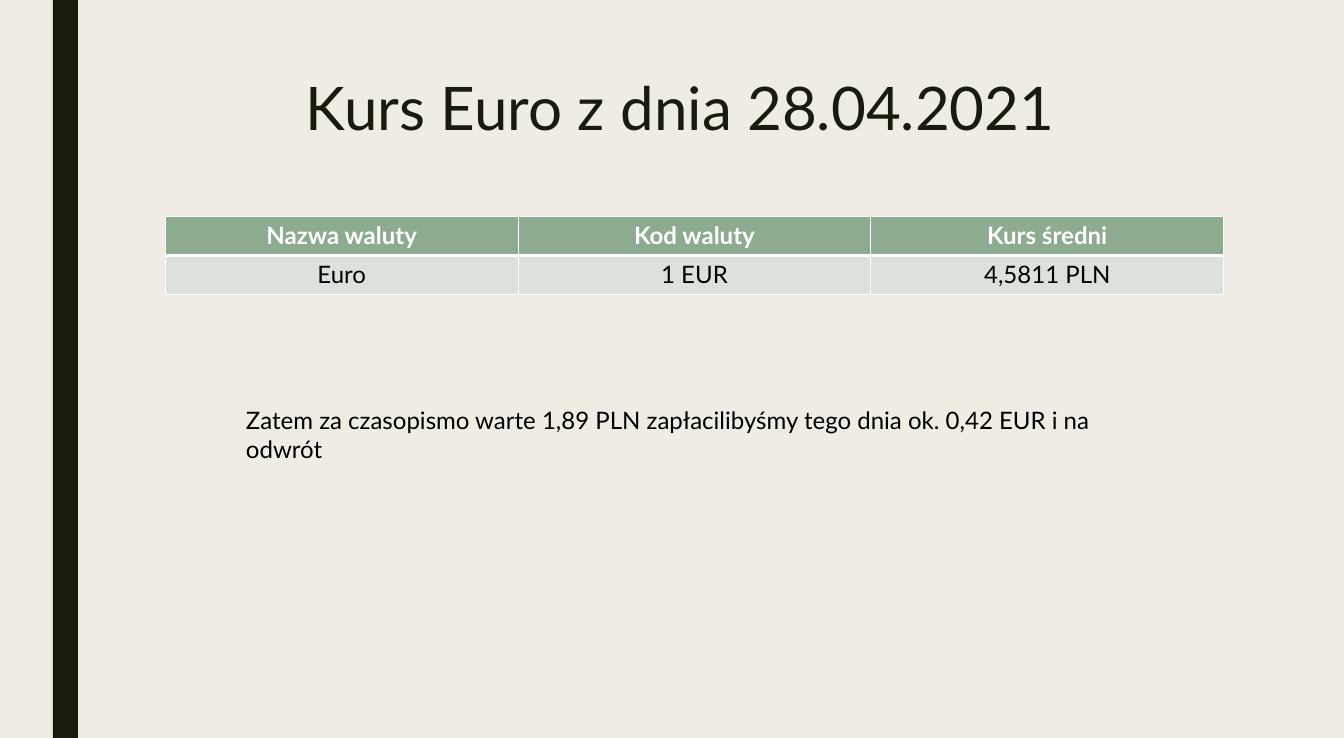
from lxml.etree import SubElement
from pptx import Presentation
from pptx.dml.color import RGBColor
from pptx.enum.shapes import MSO_SHAPE
from pptx.enum.text import MSO_ANCHOR, MSO_AUTO_SIZE, PP_ALIGN
from pptx.oxml.ns import qn
from pptx.util import Cm, Pt

TITLE = "Kurs Euro z dnia 28.04.2021"
RATES = [
    ("Nazwa waluty", "Kod waluty", "Kurs średni"),
    ("Euro", "1 EUR", "4,5811 PLN"),
]
NOTE = ("Zatem za czasopismo warte 1,89 PLN zapłacilibyśmy tego dnia "
        "ok. 0,42 EUR i na odwrót")

FONT = "Lato"
DARK, CREAM, WHITE, BLACK = "191B0E", "EFEDE3", "FFFFFF", "000000"
GREEN, PALE = "8DAB8E", "DBE2DB"
WIDE, HIGH = Cm(35.51), Cm(19.51)
SPAN = Cm(27.96)
ROW = Cm(1.03)


def color(code):
    return RGBColor.from_string(code)


def paint(fill, code):
    fill.solid()
    fill.fore_color.rgb = color(code)


def style(frame, size, code, align, bold=False):
    for para in frame.paragraphs:
        para.alignment = align
        for run in para.runs:
            font = run.font
            font.name, font.size, font.bold = FONT, Pt(size), bold
            font.color.rgb = color(code)


def border(cell, widths):
    """Draw white cell edges; call before the cell is filled."""
    props = cell._tc.get_or_add_tcPr()
    for side, width in widths.items():
        line = SubElement(props, qn("a:ln" + side), w=str(Pt(width)))
        fill = SubElement(line, qn("a:solidFill"))
        SubElement(fill, qn("a:srgbClr"), val=WHITE)


def add_rates(slide):
    rows, cols = len(RATES), len(RATES[0])
    table = slide.shapes.add_table(
        rows, cols, Cm(4.37), Cm(5.72), SPAN, ROW * rows).table
    for r, texts in enumerate(RATES):
        head = r == 0
        table.rows[r].height = ROW
        for c, text in enumerate(texts):
            cell = table.cell(r, c)
            cell.text_frame.text = text
            style(cell.text_frame, 18, WHITE if head else BLACK,
                  PP_ALIGN.CENTER, head)
            border(cell, {"L": 1, "R": 1, "T": 1 if head else 3,
                          "B": 3 if head else 1})
            paint(cell.fill, GREEN if head else PALE)


def main():
    deck = Presentation()
    deck.slide_width, deck.slide_height = WIDE, HIGH
    slide = deck.slides.add_slide(deck.slide_layouts[5])
    paint(slide.background.fill, CREAM)

    bar = slide.shapes.add_shape(
        MSO_SHAPE.RECTANGLE, Cm(1.4), 0, Cm(0.66), HIGH)
    bar.shadow.inherit = False
    paint(bar.fill, DARK)
    bar.line.fill.background()

    title = slide.shapes.title
    title.left, title.top = Cm(3.99), Cm(1.96)
    title.width, title.height = SPAN, Cm(2.69)
    frame = title.text_frame
    frame.text = TITLE
    frame.vertical_anchor = MSO_ANCHOR.TOP
    frame.auto_size = MSO_AUTO_SIZE.NONE
    style(frame, 45, DARK, PP_ALIGN.CENTER)
    frame.paragraphs[0].line_spacing = 0.89

    add_rates(slide)

    note = slide.shapes.add_textbox(Cm(6.25), Cm(10.59), Cm(24.18), Cm(1.03))
    frame = note.text_frame
    frame.text = NOTE
    frame.word_wrap = True
    frame.auto_size = MSO_AUTO_SIZE.SHAPE_TO_FIT_TEXT
    style(frame, 18, BLACK, PP_ALIGN.LEFT)

    deck.save("out.pptx")


if __name__ == "__main__":
    main()
